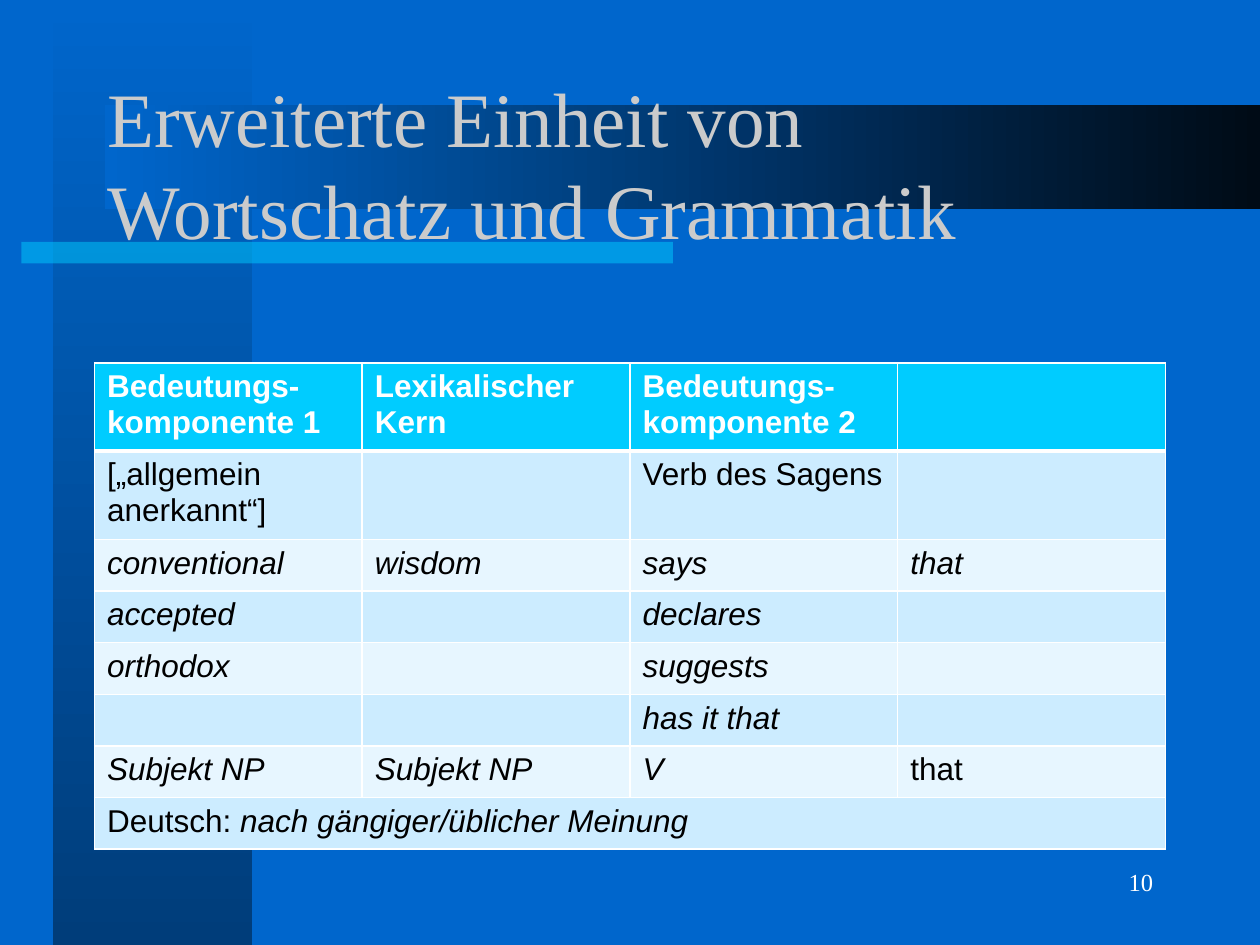
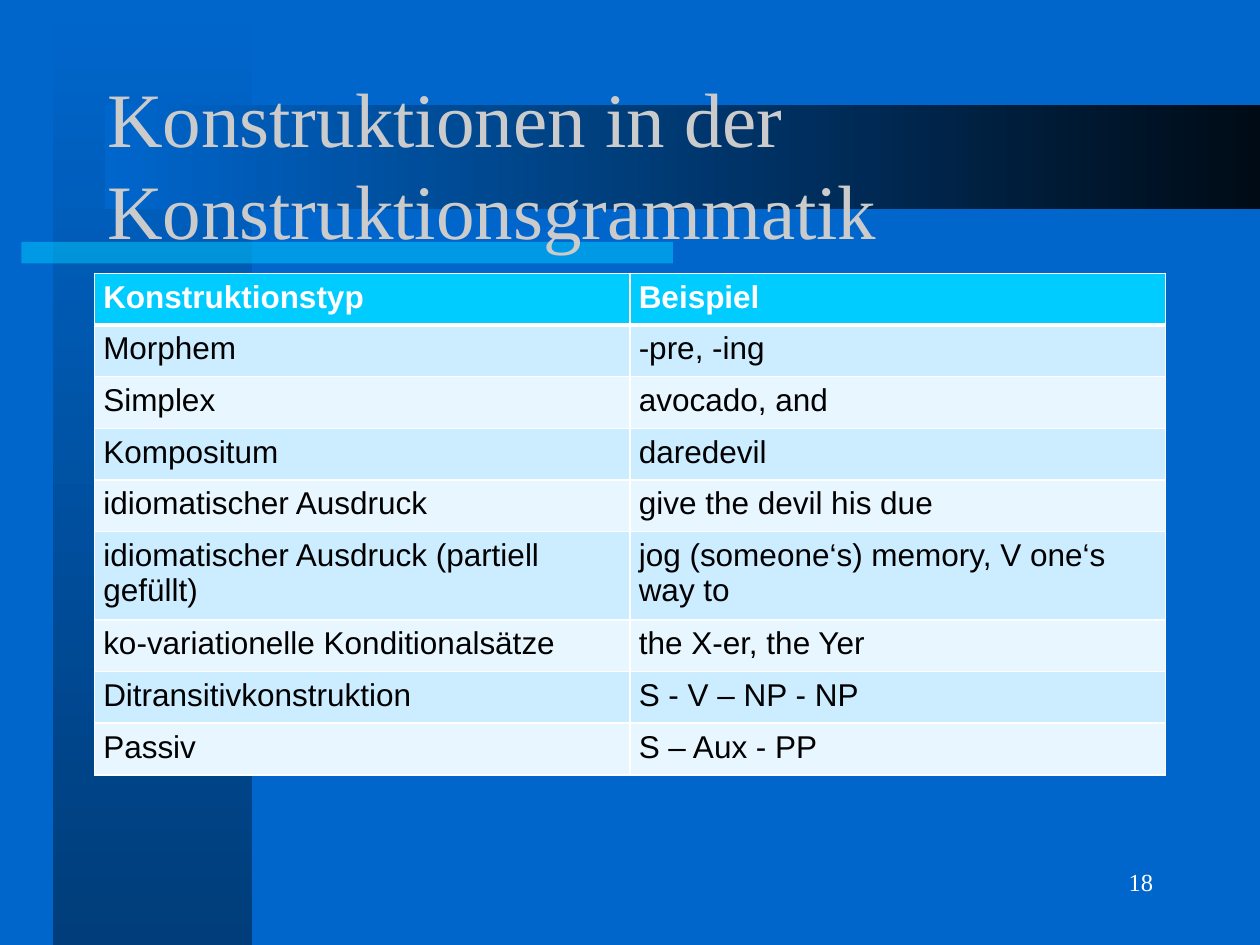
"""Builds two slides on constructions in vocabulary and grammar."""
from lxml import etree
from pptx import Presentation
from pptx.dml.color import RGBColor
from pptx.enum.shapes import MSO_SHAPE
from pptx.enum.text import MSO_ANCHOR, MSO_AUTO_SIZE, PP_ALIGN
from pptx.oxml.ns import qn
from pptx.util import Inches, Pt

RECTANGLE = MSO_SHAPE.RECTANGLE
MIDDLE = MSO_ANCHOR.MIDDLE
NO_AUTOFIT = MSO_AUTO_SIZE.NONE
LEFT, RIGHT = PP_ALIGN.LEFT, PP_ALIGN.RIGHT

BLUE = RGBColor(0x00, 0x66, 0xCC)
COLUMN_END = RGBColor(0x00, 0x3D, 0x7A)
BAND_END = RGBColor(0x00, 0x0B, 0x16)
CYAN = RGBColor(0x00, 0xCC, 0xFF)
SILVER = RGBColor(0xCB, 0xCB, 0xCB)
WHITE = RGBColor(0xFF, 0xFF, 0xFF)
BLACK = RGBColor(0x00, 0x00, 0x00)
ROW_FILLS = (RGBColor(0xE7, 0xF6, 0xFF), RGBColor(0xCC, 0xEC, 0xFF))

SERIF = "Times New Roman"
SANS = "Arial"
TITLE_ONLY = 5
DOWNWARDS, RIGHTWARDS = 270, 0

LEXICAL_ROWS = [
    ["Bedeutungs-komponente 1", "Lexikalischer Kern", "Bedeutungs-komponente 2", ""],
    ["[„allgemein anerkannt“]", "", "Verb des Sagens", ""],
    ["*conventional*", "*wisdom*", "*says*", "*that*"],
    ["*accepted*", "", "*declares*", ""],
    ["*orthodox*", "", "*suggests*", ""],
    ["", "", "*has it that*", ""],
    ["*Subjekt NP*", "*Subjekt NP*", "*V*", "that"],
    ["Deutsch: *nach gängiger/üblicher Meinung*", "", "", ""],
]

CONSTRUCTION_ROWS = [
    ["Konstruktionstyp", "Beispiel"],
    ["Morphem", "-pre, -ing"],
    ["Simplex", "avocado, and"],
    ["Kompositum", "daredevil"],
    ["idiomatischer Ausdruck", "give the devil his due"],
    ["idiomatischer Ausdruck (partiell gefüllt)",
     "jog (someone‘s) memory, V one‘s way to"],
    ["ko-variationelle Konditionalsätze", "the X-er, the Yer"],
    ["Ditransitivkonstruktion", "S - V – NP - NP"],
    ["Passiv", "S – Aux - PP"],
]


class Deck:
    """Holds the shared style and the current slide."""

    def __init__(self):
        """Create the presentation with its blue background."""
        self.presentation = Presentation()
        self.presentation.slide_width = Inches(10)
        self.presentation.slide_height = Inches(7.5)
        fill = self.presentation.slide_master.background.fill
        fill.solid()
        fill.fore_color.rgb = BLUE
        self.slide = None

    def add_slide(self, title, number):
        """Start a slide with its bands, title and number."""
        layout = self.presentation.slide_layouts[TITLE_ONLY]
        self.slide = self.presentation.slides.add_slide(layout)
        self.gradient_band(0.42, 0, 1.58, 7.5, COLUMN_END, DOWNWARDS)
        self.underline()
        self.gradient_band(0.83, 0.83, 9.17, 0.83, BAND_END, RIGHTWARDS)
        self.title(title)
        self.page_number(number)

    def band(self, left, top, width, height):
        """Add a rectangle without outline or shadow."""
        shape = self.slide.shapes.add_shape(
            RECTANGLE, Inches(left), Inches(top), Inches(width), Inches(height))
        shape.shadow.inherit = False
        shape.line.fill.background()
        return shape

    def gradient_band(self, left, top, width, height, end_color, angle):
        """Add a band that runs from the background blue to another colour."""
        fill = self.band(left, top, width, height).fill
        fill.gradient()
        fill.gradient_angle = angle
        for stop, color in zip(fill.gradient_stops, (BLUE, end_color)):
            stop.color.rgb = color

    def underline(self):
        """Add the half-transparent bar under the title."""
        shape = self.band(0.17, 1.92, 5.17, 0.17)
        shape.fill.solid()
        shape.fill.fore_color.rgb = CYAN
        color = shape.fill._xPr.find(qn("a:solidFill"))[0]
        etree.SubElement(color, qn("a:alpha"), val="50000")

    def format_font(self, font, name, size, color, bold=False):
        """Set the look of a font."""
        font.name = name
        font.size = Pt(size)
        font.bold = bold
        font.color.rgb = color

    def title(self, text):
        """Fill the title placeholder and bring it in front of the bands."""
        title = self.slide.shapes.title
        title.left, title.top = Inches(0.75), Inches(0.67)
        title.width, title.height = Inches(8.5), Inches(1.25)
        frame = title.text_frame
        frame.text = text
        frame.auto_size = NO_AUTOFIT
        frame.vertical_anchor = MIDDLE
        paragraph = frame.paragraphs[0]
        paragraph.alignment = LEFT
        paragraph.line_spacing = Pt(52.5)
        self.format_font(paragraph.font, SERIF, 44, SILVER)
        self.slide.shapes._spTree.append(title._element)

    def page_number(self, number):
        """Add the slide number at the lower right."""
        box = self.slide.shapes.add_textbox(
            Inches(7.17), Inches(6.75), Inches(2.08), Inches(0.5))
        frame = box.text_frame
        frame.word_wrap = True
        frame.vertical_anchor = MIDDLE
        paragraph = frame.paragraphs[0]
        paragraph.text = str(number)
        paragraph.alignment = RIGHT
        self.format_font(paragraph.font, SERIF, 14, WHITE)

    def borders(self, cell, top, bottom):
        """Draw white lines around a cell, with top and bottom widths in points."""
        properties = cell._tc.get_or_add_tcPr()
        for side, width in (("L", 1), ("R", 1), ("T", top), ("B", bottom)):
            line = etree.SubElement(properties, qn(f"a:ln{side}"), w=str(Pt(width)))
            fill = etree.SubElement(line, qn("a:solidFill"))
            etree.SubElement(fill, qn("a:srgbClr"), val=str(WHITE))

    def cell(self, cell, text, row_index, margin):
        """Fill one table cell; parts between asterisks are italic."""
        is_header = row_index == 0
        self.borders(cell, 3 if row_index == 1 else 1, 3 if is_header else 1)
        cell.fill.solid()
        cell.fill.fore_color.rgb = CYAN if is_header else ROW_FILLS[row_index % 2]
        cell.margin_left = cell.margin_right = Inches(margin)
        paragraph = cell.text_frame.paragraphs[0]
        self.format_font(paragraph.font, SANS, 18,
                         WHITE if is_header else BLACK, is_header)
        for index, part in enumerate(text.split("*")):
            if part:
                run = paragraph.add_run()
                run.text = part
                run.font.italic = index % 2 == 1

    def table(self, rows, top, margin):
        """Add a table with equal columns and return it."""
        width, row_height = 8.5, 0.41
        column_count = len(rows[0])
        table = self.slide.shapes.add_table(
            len(rows), column_count, Inches(0.75), Inches(top),
            Inches(width), Inches(row_height * len(rows))).table
        for row_index, row in enumerate(rows):
            for column_index, text in enumerate(row):
                self.cell(table.cell(row_index, column_index), text, row_index, margin)
        return table


def main():
    """Build both slides and save them."""
    deck = Deck()
    deck.add_slide("Erweiterte Einheit von Wortschatz und Grammatik", 10)
    table = deck.table(LEXICAL_ROWS, 2.88, 0.1)
    last_row = len(LEXICAL_ROWS) - 1
    table.cell(last_row, 0).merge(table.cell(last_row, 3))

    deck.add_slide("Konstruktionen in der Konstruktionsgrammatik", 18)
    deck.table(CONSTRUCTION_ROWS, 2.17, 0.07)
    deck.presentation.save("out.pptx")


if __name__ == "__main__":
    main()
